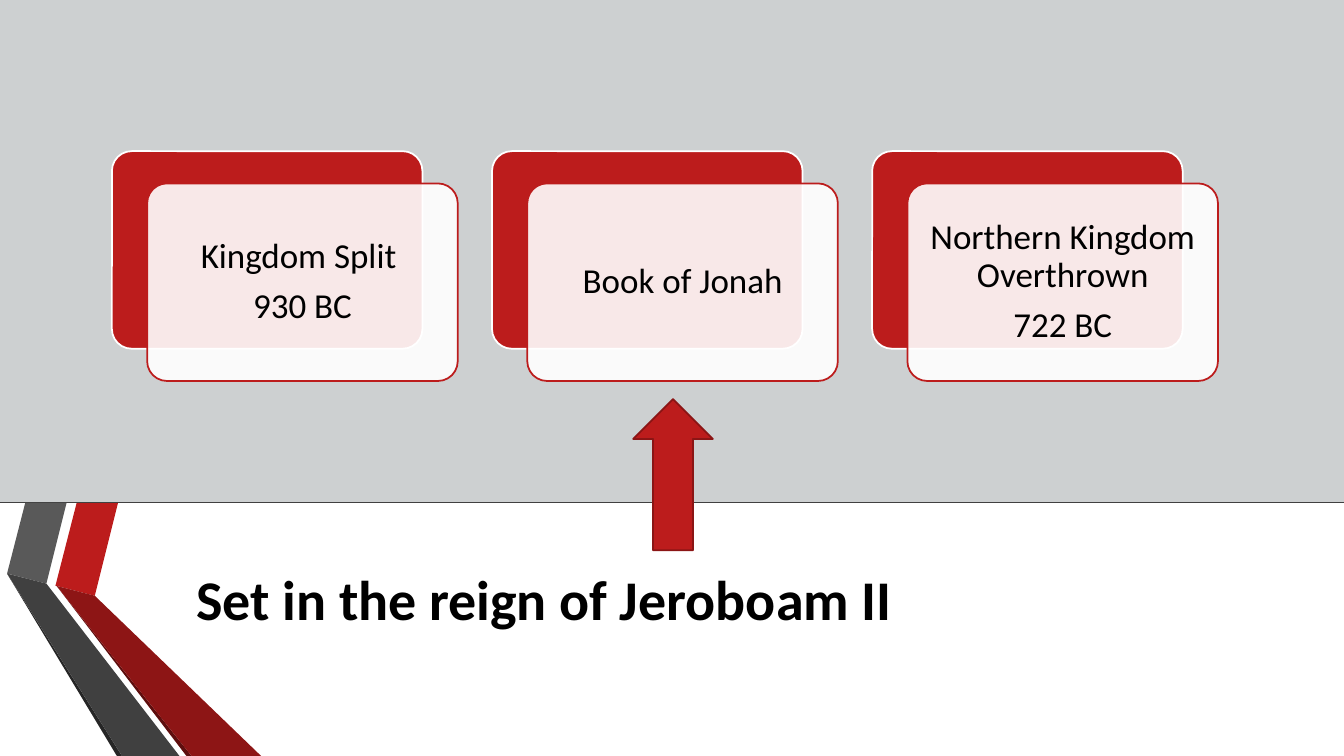
from dataclasses import dataclass

from lxml import etree
from pptx import Presentation
from pptx.dml.color import RGBColor
from pptx.enum.shapes import MSO_CONNECTOR, MSO_SHAPE
from pptx.enum.text import MSO_ANCHOR, PP_ALIGN
from pptx.oxml.ns import qn
from pptx.util import Inches, Pt

RECTANGLE = MSO_SHAPE.RECTANGLE
ROUNDED = MSO_SHAPE.ROUNDED_RECTANGLE
UP_ARROW = MSO_SHAPE.UP_ARROW
STRAIGHT = MSO_CONNECTOR.STRAIGHT
MIDDLE = MSO_ANCHOR.MIDDLE
CENTER = PP_ALIGN.CENTER

FONT = "Calibri"
COLORS = {
    "white": "FFFFFF",
    "black": "000000",
    "panel": "CDD0D1",
    "red": "BC1C1C",
    "arrow edge": "8B1515",
    "dark red": "8D1515",
    "deep red": "5E0E0E",
    "gray": "595959",
    "dark gray": "404040",
    "deep gray": "262626",
}
PAGE_WIDTH, PAGE_HEIGHT = 13.33, 7.5
HORIZON = 4.99
CARD_WIDTH, CARD_HEIGHT = 3.08, 1.96
CARD_LEFT, CARD_TOP, CARD_PITCH = 1.11, 1.5, 3.77
FRONT_SHIFT_X, FRONT_SHIFT_Y = 0.35, 0.32


@dataclass
class Ribbon:
    color: str
    points: list[tuple[float, float]]


@dataclass
class Event:
    lines: list[str]


RIBBONS = [
    Ribbon("red", [(0.76, HORIZON), (1.17, HORIZON), (0.94, 5.91), (0.55, 5.81)]),
    Ribbon("gray", [(0.25, HORIZON), (0.66, HORIZON), (0.46, 5.79), (0.07, 5.69)]),
    Ribbon("deep gray", [(0.07, 5.69), (1.21, PAGE_HEIGHT), (1.16, PAGE_HEIGHT)]),
    Ribbon("deep red", [(0.56, 5.81), (1.9, PAGE_HEIGHT), (1.85, PAGE_HEIGHT)]),
    Ribbon("dark red", [(0.55, 5.81), (0.94, 5.91), (2.59, PAGE_HEIGHT),
                        (1.9, PAGE_HEIGHT), (0.56, 5.81)]),
    Ribbon("dark gray", [(0.07, 5.69), (0.46, 5.79), (0.53, 5.88),
                         (1.78, PAGE_HEIGHT), (1.21, PAGE_HEIGHT)]),
]
EVENTS = [
    Event(["Kingdom Split ", "930 BC"]),
    Event(["Book of Jonah"]),
    Event(["Northern Kingdom Overthrown", "722 BC"]),
]


def rgb(name: str) -> RGBColor:
    return RGBColor.from_string(COLORS[name])


def paint(shape, fill: str, line: str | None = None) -> None:
    shape.shadow.inherit = False
    shape.fill.solid()
    shape.fill.fore_color.rgb = rgb(fill)
    if line:
        shape.line.color.rgb = rgb(line)
        shape.line.width = Pt(1.25)
    else:
        shape.line.fill.background()


def add_preset(page, kind, left: float, top: float, width: float, height: float,
               fill: str, line: str | None = None):
    shape = page.shapes.add_shape(
        kind, Inches(left), Inches(top), Inches(width), Inches(height))
    paint(shape, fill, line)
    return shape


def add_ribbon(page, ribbon: Ribbon) -> None:
    points = [(Inches(x), Inches(y)) for x, y in ribbon.points]
    builder = page.shapes.build_freeform(*points[0])
    builder.add_line_segments(points[1:], close=True)
    paint(builder.convert_to_shape(), ribbon.color)


def add_horizon(page) -> None:
    line = page.shapes.add_connector(
        STRAIGHT, 0, Inches(HORIZON), Inches(PAGE_WIDTH), Inches(HORIZON))
    line.line.color.rgb = rgb("dark gray")
    line.line.width = Pt(0.75)
    etree.SubElement(line._element.spPr, qn("a:effectLst"))


def add_title(page, text: str) -> None:
    box = page.shapes.add_textbox(
        Inches(1.85), Inches(5.37), Inches(10.73), Inches(1.12))
    frame = box.text_frame
    frame.word_wrap = True
    frame.vertical_anchor = MIDDLE
    para = frame.paragraphs[0]
    para.text = text
    para.space_after = Pt(6)
    para.font.name = FONT
    para.font.size = Pt(40)
    para.font.bold = True
    para.font.color.rgb = rgb("black")


def add_event(page, event: Event, left: float) -> None:
    back = add_preset(page, ROUNDED, left, CARD_TOP, CARD_WIDTH, CARD_HEIGHT,
                      "red", "white")
    front = add_preset(page, ROUNDED, left + FRONT_SHIFT_X, CARD_TOP + FRONT_SHIFT_Y,
                       CARD_WIDTH, CARD_HEIGHT, "white", "red")
    for card in (back, front):
        card.adjustments[0] = 0.1

    # Let the back card show faintly through the front one
    fill_color = front._element.spPr.find(qn("a:solidFill"))[0]
    etree.SubElement(fill_color, qn("a:alpha"), val="90000")

    frame = front.text_frame
    frame.word_wrap = True
    frame.vertical_anchor = MIDDLE
    frame.margin_left = frame.margin_right = Inches(0.15)
    frame.margin_top = frame.margin_bottom = Inches(0.15)
    for index, text in enumerate(event.lines):
        para = frame.add_paragraph() if index else frame.paragraphs[0]
        para.text = text
        para.alignment = CENTER
        para.line_spacing = 0.9
        para.space_after = Pt(8.75)
        para.font.name = FONT
        para.font.size = Pt(25)
        para.font.color.rgb = rgb("black")


def main() -> None:
    deck = Presentation()
    deck.slide_width = Inches(PAGE_WIDTH)
    deck.slide_height = Inches(PAGE_HEIGHT)
    page = deck.slides.add_slide(deck.slide_layouts[6])
    page.background.fill.solid()
    page.background.fill.fore_color.rgb = rgb("white")

    # Upper panel, title and ribbons
    add_preset(page, RECTANGLE, 0, 0, PAGE_WIDTH, HORIZON, "panel")
    add_title(page, "Set in the reign of Jeroboam II")
    add_horizon(page)
    for ribbon in RIBBONS:
        add_ribbon(page, ribbon)

    # Timeline cards
    for index, event in enumerate(EVENTS):
        add_event(page, event, CARD_LEFT + index * CARD_PITCH)

    # Arrow from the title to the middle card
    add_preset(page, UP_ARROW, 6.28, 3.96, 0.79, 1.5, "red", "arrow edge")

    deck.save("out.pptx")


if __name__ == "__main__":
    main()
